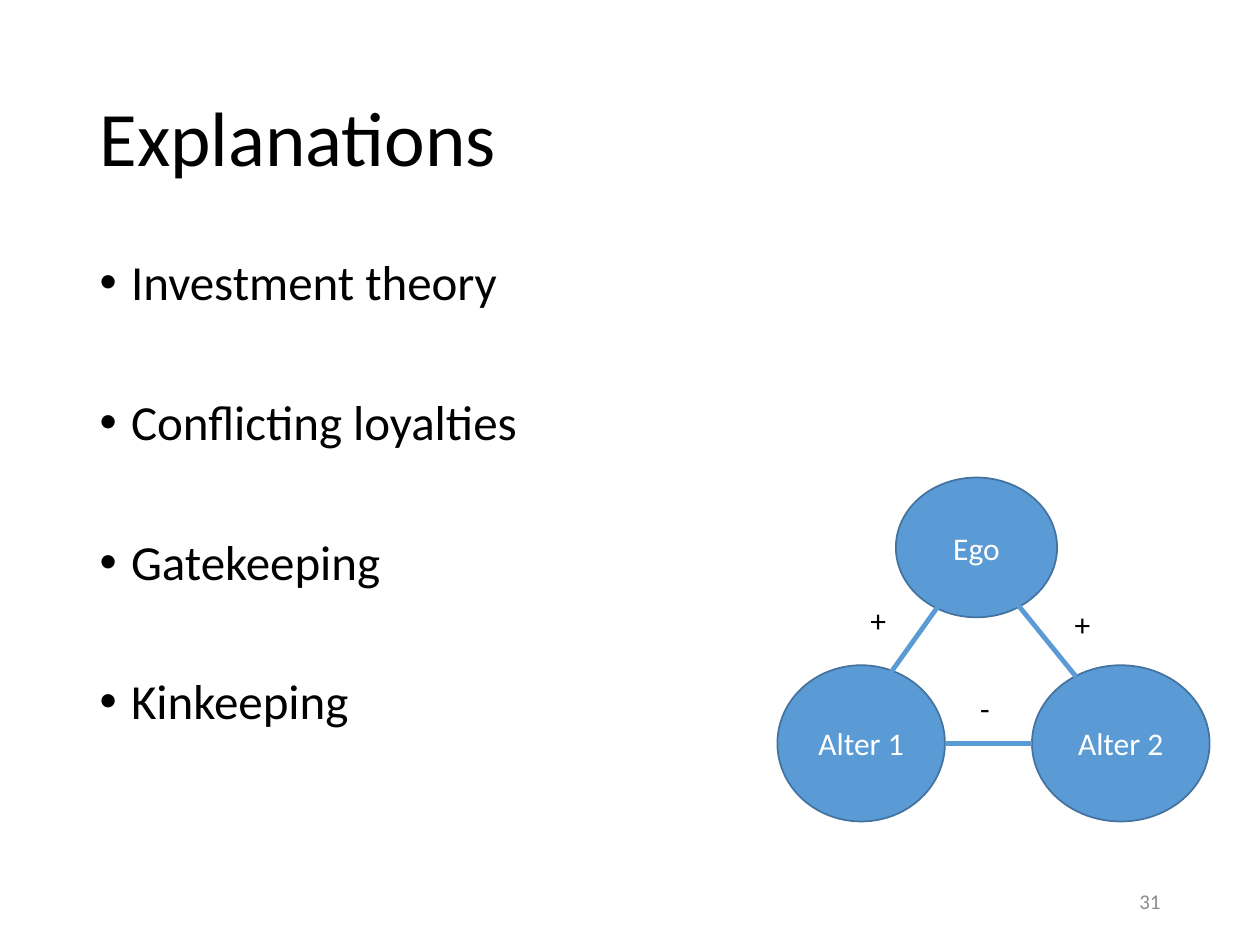
import pptx
import pptx.util
import pptx.dml.color
import pptx.enum.shapes
import pptx.enum.text
import pptx.oxml.ns
import lxml.etree

Inches, Pt = pptx.util.Inches, pptx.util.Pt
RGB = pptx.dml.color.RGBColor.from_string
ALIGN = pptx.enum.text.PP_ALIGN
ANCHOR = pptx.enum.text.MSO_ANCHOR
qn = pptx.oxml.ns.qn

HEADING = "Explanations"
EXPLANATIONS = ["Investment theory", "Conflicting loyalties", "Gatekeeping", "Kinkeeping"]
PAGE_NUMBER = "31"
PEOPLE = [
    ("Ego", (7.11, 3.79, 1.28, 1.11)),
    ("Alter 1", (6.17, 5.28, 1.33, 1.24)),
    ("Alter 2", (8.19, 5.28, 1.41, 1.24)),
]
TIES = [
    ((7.44, 4.82), (7.04, 5.38)),
    ((8.19, 5.9), (7.5, 5.9)),
    ((8.07, 4.79), (8.54, 5.37)),
]
SIGNS = [("+", (6.81, 4.72)), ("+", (8.43, 4.75)), ("-", (7.68, 5.42))]

THEME = {
    "font": "Calibri",
    "ink": "000000", "muted": "8C8C8C", "on_fill": "FFFFFF",
    "fill": "5B9BD5", "outline": "43739E",
    "title": 44, "body": 28, "label": 18, "page": 12,
    "outline_width": 1, "tie_width": 2.75,
    "line_spacing": 0.9, "bullet_gap": 49.6, "bullet_indent": 0.25,
}
LEFT, WIDTH = 0.69, 8.62


def place(part, box):
    part.left, part.top, part.width, part.height = map(Inches, box)


def style(paragraph, size, color="ink", align=ALIGN.LEFT):
    paragraph.alignment = align
    font = paragraph.font
    font.name, font.size = THEME["font"], Pt(THEME[size])
    font.color.rgb = RGB(THEME[color])


def write(part, text, size, color="ink", align=ALIGN.LEFT, anchor=ANCHOR.MIDDLE):
    frame = part.text_frame
    frame.word_wrap = True
    frame.auto_size = pptx.enum.text.MSO_AUTO_SIZE.NONE
    frame.vertical_anchor = anchor
    frame.text = text
    for paragraph in frame.paragraphs:
        style(paragraph, size, color, align)
    return frame.paragraphs


def add_bullet(paragraph):
    properties = paragraph._p.get_or_add_pPr()
    indent = Inches(THEME["bullet_indent"])
    properties.set("marL", str(indent))
    properties.set("indent", str(-indent))
    font = lxml.etree.Element(qn("a:buFont"), typeface="Arial")
    bullet = lxml.etree.Element(qn("a:buChar"), char="•")
    defaults = properties.find(qn("a:defRPr"))
    defaults.addprevious(font)
    defaults.addprevious(bullet)


def add_person(slide, name, box):
    person = slide.shapes.add_shape(
        pptx.enum.shapes.MSO_SHAPE.OVAL, *map(Inches, box))
    person.shadow.inherit = False
    person.fill.solid()
    person.fill.fore_color.rgb = RGB(THEME["fill"])
    person.line.color.rgb = RGB(THEME["outline"])
    person.line.width = Pt(THEME["outline_width"])
    write(person, name, "label", "on_fill", ALIGN.CENTER)


def add_tie(slide, start, end):
    tie = slide.shapes.add_connector(
        pptx.enum.shapes.MSO_CONNECTOR.STRAIGHT, *map(Inches, start + end))
    tie.line.color.rgb = RGB(THEME["fill"])
    tie.line.width = Pt(THEME["tie_width"])
    lxml.etree.SubElement(tie._element.spPr, qn("a:effectLst"))


def main():
    deck = pptx.Presentation()
    deck.slide_width, deck.slide_height = Inches(10), Inches(7.5)
    slide = deck.slides.add_slide(deck.slide_layouts[1])

    heading, explanations = slide.placeholders
    place(heading, (LEFT, 0.4, WIDTH, 1.45))
    write(heading, HEADING, "title")[0].line_spacing = THEME["line_spacing"]

    place(explanations, (LEFT, 2, WIDTH, 4.76))
    bullets = write(explanations, "\n".join(EXPLANATIONS), "body", anchor=ANCHOR.TOP)
    for index, paragraph in enumerate(bullets):
        paragraph.line_spacing = THEME["line_spacing"]
        paragraph.space_before = Pt(THEME["bullet_gap"] if index else 0)
        add_bullet(paragraph)

    page = slide.shapes.add_textbox(*map(Inches, (7.06, 6.95, 2.25, 0.4)))
    write(page, PAGE_NUMBER, "page", "muted", ALIGN.RIGHT)

    for name, box in PEOPLE:
        add_person(slide, name, box)
    for start, end in TIES:
        add_tie(slide, start, end)
    for sign, corner in SIGNS:
        label = slide.shapes.add_textbox(*map(Inches, corner + (0.33, 0.4)))
        write(label, sign, "label", anchor=ANCHOR.TOP)

    deck.save("out.pptx")


if __name__ == "__main__":
    main()
